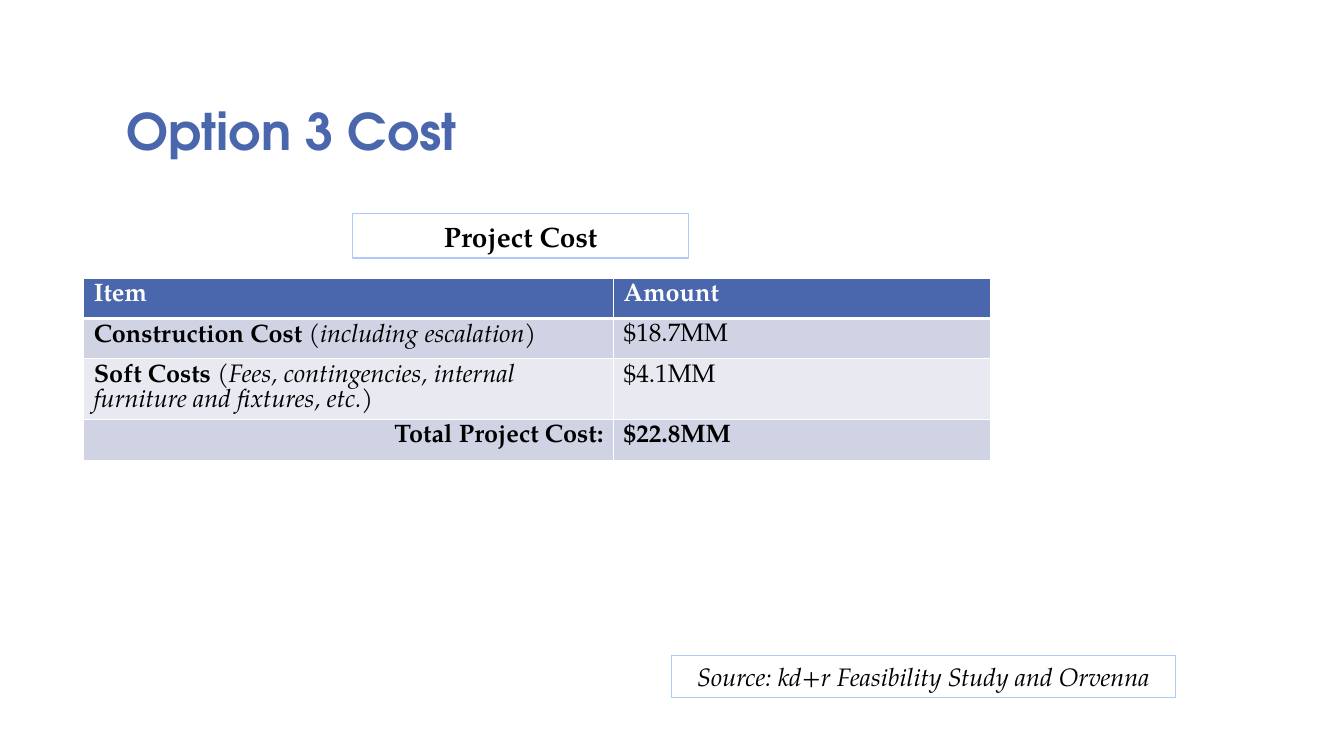
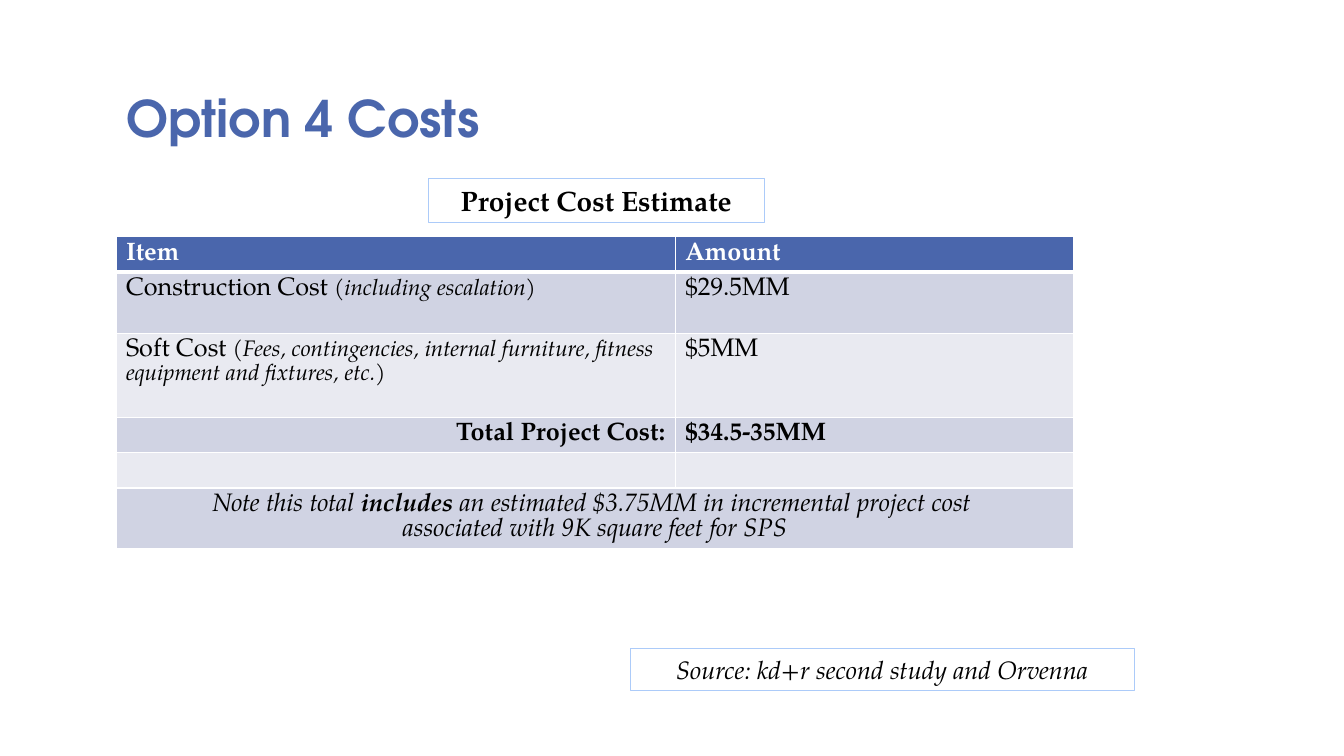
from dataclasses import dataclass

from lxml import etree
from pptx import Presentation
from pptx.dml.color import RGBColor
from pptx.enum.shapes import MSO_SHAPE
from pptx.enum.text import MSO_ANCHOR, MSO_AUTO_SIZE, PP_ALIGN
from pptx.oxml.ns import qn
from pptx.util import Inches, Pt

RECTANGLE = MSO_SHAPE.RECTANGLE
LEFT, CENTER, RIGHT = PP_ALIGN.LEFT, PP_ALIGN.CENTER, PP_ALIGN.RIGHT
MIDDLE, BOTTOM = MSO_ANCHOR.MIDDLE, MSO_ANCHOR.BOTTOM
NO_AUTOFIT = MSO_AUTO_SIZE.NONE
TITLE_ONLY = 5


@dataclass(frozen=True)
class Theme:
    heading_font: str = "TeX Gyre Adventor"
    body_font: str = "TeX Gyre Pagella"
    accent: str = "4A66AC"
    outline: str = "ACCBF9"
    white: str = "FFFFFF"
    black: str = "000000"
    bands: tuple = ("D0D3E3", "E9EAF1")
    title_size: int = 36
    caption_size: int = 20
    body_size: int = 18
    detail_size: int = 16
    title_spacing: float = 0.8
    border: float = 1
    header_border: float = 3
    box_line: float = 0.75


THEME = Theme()
FIRST_COLUMN_SHARE = 0.584
STYLES = {
    "plain": {},
    "bold": {"bold": True},
    "italic": {"italic": True},
    "bold italic": {"bold": True, "italic": True},
    "detail": {"italic": True, "size": THEME.detail_size},
}


def line(*runs, align=LEFT):
    return runs, align


def plain(text):
    return [line((text, "plain"))]


def total_row(amount):
    return [[line(("Total Project Cost:", "bold"), align=RIGHT)], [line((amount, "bold"))]]


HEADER = [[line(("Item", "bold"))], [line(("Amount", "bold"))]]

SLIDES = [
    {
        "title": ("Option 3 Cost", 0.47),
        "caption": ("Project Cost", 3.5, 2.12),
        "source": ("Source: kd+r Feasibility Study and Orvenna", 6.66, 6.5),
        "table": (0.83, 2.76, 9),
        "rows": [
            (0.4, HEADER),
            (0.4, [
                [line(("Construction Cost ", "bold"), ("(including escalation)", "italic"))],
                plain("$18.7MM"),
            ]),
            (0.6, [
                [line(("Soft Costs ", "bold"),
                      ("(Fees, contingencies, internal furniture and fixtures, etc.)", "italic"))],
                plain("$4.1MM"),
            ]),
            (0.41, total_row("$22.8MM")),
        ],
    },
    {
        "title": ("Option 4 Costs", 0.34),
        "caption": ("Project Cost Estimate", 4.25, 1.77),
        "source": ("Source: kd+r second study and Orvenna", 6.25, 6.43),
        "table": (1.15, 2.35, 9.5),
        "rows": [
            (0.35, HEADER),
            (0.61, [
                [line(("Construction Cost ", "plain"), ("(including escalation)", "detail"))],
                plain("$29.5MM"),
            ]),
            (0.83, [
                [line(("Soft Cost ", "plain"),
                      ("(Fees, contingencies, internal furniture, fitness equipment "
                       "and fixtures, etc.)", "detail"))],
                plain("$5MM"),
            ]),
            (0.35, total_row("$34.5-35MM")),
            (0.35, [[line()], [line()]]),
            (0.6, [[
                line(("Note this total ", "italic"), ("includes", "bold italic"),
                     (" an estimated $3.75MM in incremental project cost ", "italic"),
                     align=CENTER),
                line(("associated with 9K square feet for SPS", "italic"), align=CENTER),
            ]]),
        ],
    },
]


def rgb(value):
    return RGBColor.from_string(value)


def format_font(font, name=THEME.body_font, size=THEME.body_size,
                color=THEME.black, bold=False, italic=False):
    font.name = name
    font.size = Pt(size)
    font.color.rgb = rgb(color)
    font.bold = bold
    font.italic = italic


def add_title(slide, text, top):
    title = slide.shapes.title
    title.left, title.top = Inches(1.15), Inches(top)
    title.width, title.height = Inches(9.5), Inches(1.17)
    frame = title.text_frame
    frame.text = text
    frame.vertical_anchor = BOTTOM
    frame.auto_size = NO_AUTOFIT
    paragraph = frame.paragraphs[0]
    paragraph.alignment = LEFT
    paragraph.line_spacing = THEME.title_spacing
    format_font(paragraph.runs[0].font, THEME.heading_font, THEME.title_size,
                THEME.accent, bold=True)


def add_box(slide, content, width, height, **font_style):
    text, left, top = content
    box = slide.shapes.add_shape(RECTANGLE, Inches(left), Inches(top),
                                 Inches(width), Inches(height))
    box.shadow.inherit = False
    box.fill.background()
    box.line.color.rgb = rgb(THEME.outline)
    box.line.width = Pt(THEME.box_line)
    frame = box.text_frame
    frame.word_wrap = True
    frame.vertical_anchor = MIDDLE
    frame.text = text
    paragraph = frame.paragraphs[0]
    paragraph.alignment = CENTER
    format_font(paragraph.runs[0].font, **font_style)


def set_borders(cell, widths):
    properties = cell._tc.get_or_add_tcPr()
    for side, width in widths.items():
        border = etree.SubElement(properties, qn(f"a:ln{side}"), w=str(Pt(width)))
        fill = etree.SubElement(border, qn("a:solidFill"))
        etree.SubElement(fill, qn("a:srgbClr"), val=THEME.white)


def set_empty_line_font(paragraph):
    properties = etree.SubElement(paragraph._p, qn("a:endParaRPr"),
                                  sz=str(THEME.body_size * 100))
    etree.SubElement(properties, qn("a:latin"), typeface=THEME.body_font)


def write_cell(cell, lines, color):
    frame = cell.text_frame
    for index, (runs, align) in enumerate(lines):
        paragraph = frame.add_paragraph() if index else frame.paragraphs[0]
        paragraph.alignment = align
        for text, style in runs:
            run = paragraph.add_run()
            run.text = text
            format_font(run.font, color=color, **STYLES[style])
        if not runs:
            set_empty_line_font(paragraph)


def add_cost_table(slide, place, rows):
    left, top, width = place
    height = sum(row_height for row_height, _ in rows)
    table = slide.shapes.add_table(len(rows), 2, Inches(left), Inches(top),
                                   Inches(width), Inches(height)).table
    for column, share in zip(table.columns, (FIRST_COLUMN_SHARE, 1 - FIRST_COLUMN_SHARE)):
        column.width = Inches(width * share)
    for index, (row_height, contents) in enumerate(rows):
        table.rows[index].height = Inches(row_height)
        is_header = index == 0
        fill = THEME.accent if is_header else THEME.bands[(index - 1) % 2]
        widths = dict.fromkeys("LRTB", THEME.border)
        if is_header:
            widths["B"] = THEME.header_border
        elif index == 1:
            widths["T"] = THEME.header_border
        cells = [table.cell(index, column) for column in range(2)]
        for cell in cells:
            set_borders(cell, widths)
            cell.fill.solid()
            cell.fill.fore_color.rgb = rgb(fill)
        if len(contents) == 1:
            cells[0].merge(cells[1])
        for cell, lines in zip(cells, contents):
            write_cell(cell, lines, THEME.white if is_header else THEME.black)


def main():
    presentation = Presentation()
    presentation.slide_width = Inches(13.33)
    presentation.slide_height = Inches(7.5)
    for content in SLIDES:
        slide = presentation.slides.add_slide(presentation.slide_layouts[TITLE_ONLY])
        add_cost_table(slide, content["table"], content["rows"])
        add_title(slide, *content["title"])
        add_box(slide, content["caption"], 3.33, 0.44, size=THEME.caption_size, bold=True)
        add_box(slide, content["source"], 5, 0.42, italic=True)
    presentation.save("out.pptx")


if __name__ == "__main__":
    main()
